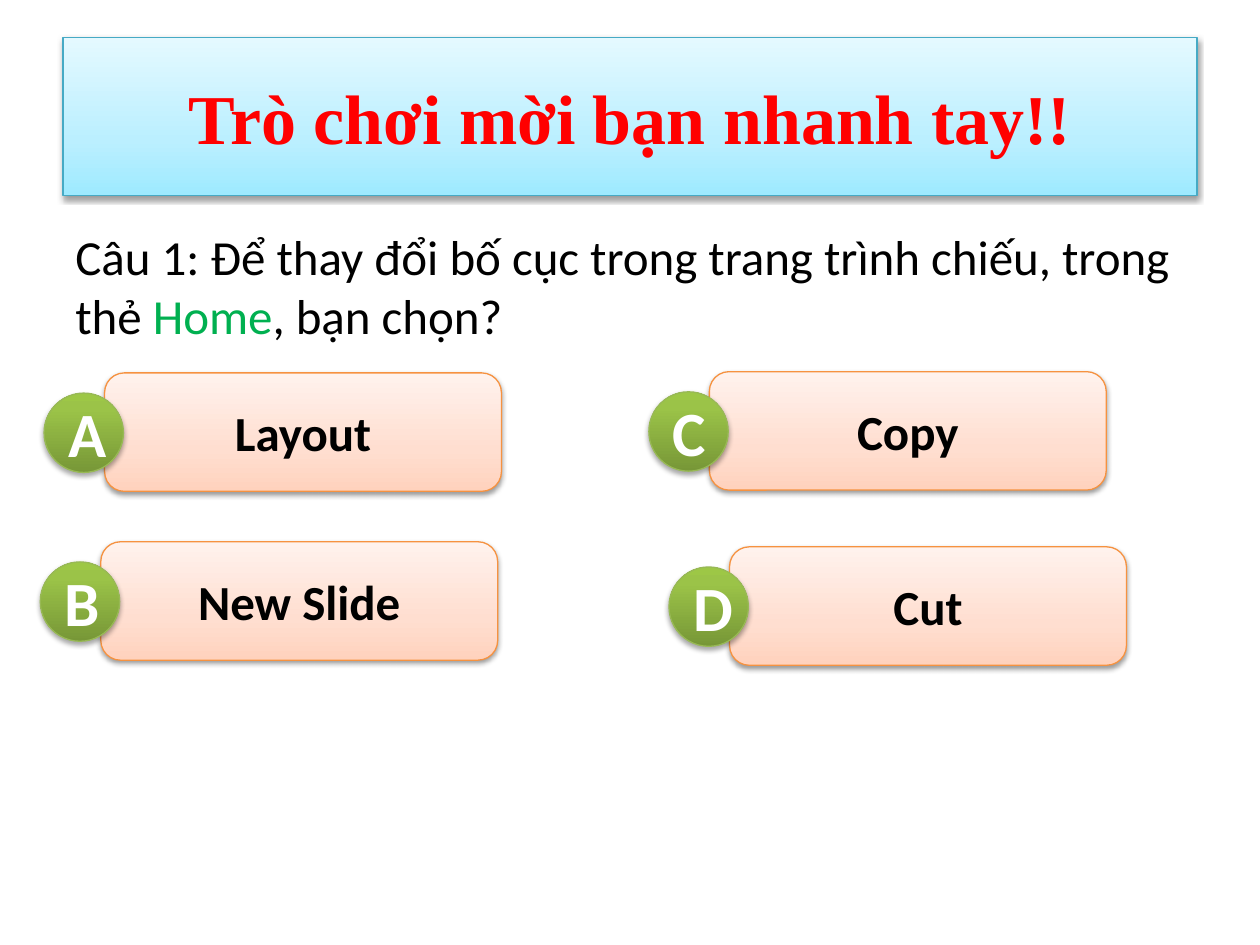
from lxml import etree
from pptx import Presentation
from pptx.dml.color import RGBColor
from pptx.enum.shapes import MSO_SHAPE
from pptx.enum.text import MSO_ANCHOR, PP_ALIGN
from pptx.oxml.ns import qn
from pptx.util import Inches, Pt

ROUNDED = MSO_SHAPE.ROUNDED_RECTANGLE
OVAL = MSO_SHAPE.OVAL
MIDDLE = MSO_ANCHOR.MIDDLE
CENTER = PP_ALIGN.CENTER

COLORS = {
    "black": "000000", "white": "FFFFFF", "red": "FF0000", "green": "00B050",
    "title line": "46AAC5", "answer line": "F69240", "badge line": "98B955",
}
# Stops run from bottom to top: (percent, colour)
TITLE_STOPS = [(0, "9EEAFF"), (35, "BBEFFF"), (100, "E4F9FF")]
ANSWER_STOPS = [(0, "FFD2BD"), (35, "FFDED0"), (100, "FFF2ED")]
BADGE_STOPS = [(0, "779737"), (80, "9BC348"), (100, "9DC746")]


def format_font(font, size, color, name="Calibri", bold=False):
    font.name = name
    font.size = Pt(size)
    font.bold = bold
    font.color.rgb = RGBColor.from_string(COLORS[color])


def add_panel(page, kind, bounds, stops, line, shadow, text):
    """Add a shape with a gradient, a soft shadow and centred text."""
    shape = page.shapes.add_shape(kind, *[Inches(value) for value in bounds])
    shape.fill.gradient()
    shape.fill.gradient_angle = 90
    properties = shape._element.spPr
    stop_list = properties.find(".//" + qn("a:gsLst"))
    for old_stop in list(stop_list):
        stop_list.remove(old_stop)
    for percent, color in stops:
        stop = etree.SubElement(stop_list, qn("a:gs"), pos=str(percent * 1000))
        etree.SubElement(stop, qn("a:srgbClr"), val=color)
    shape.line.color.rgb = RGBColor.from_string(COLORS[line])
    shape.line.width = Pt(0.75)

    opacity, distance = shadow
    shape.shadow.inherit = False
    outer = etree.SubElement(
        properties.find(qn("a:effectLst")), qn("a:outerShdw"),
        blurRad=str(Pt(3.1)), dist=str(Pt(distance)), dir="5400000", rotWithShape="0")
    shade = etree.SubElement(outer, qn("a:srgbClr"), val=COLORS["black"])
    etree.SubElement(shade, qn("a:alpha"), val=str(opacity * 1000))

    frame = shape.text_frame
    frame.text = text
    frame.word_wrap = True
    frame.vertical_anchor = MIDDLE
    frame.paragraphs[0].alignment = CENTER
    return shape


deck = Presentation()
deck.slide_width = Inches(10)
deck.slide_height = Inches(7.5)
page = deck.slides.add_slide(deck.slide_layouts[6])

# Question
box = page.shapes.add_textbox(Inches(0.5), Inches(1.75), Inches(9.3), Inches(1.06))
box.text_frame.word_wrap = True
para = box.text_frame.paragraphs[0]
for text, color in [
    ("Câu 1: Để thay đổi bố cục trong trang trình chiếu, trong thẻ ", "black"),
    ("Home", "green"),
    (", bạn chọn?", "black"),
]:
    span = para.add_run()
    span.text = text
    format_font(span.font, 28, color)

# Title
title = add_panel(page, ROUNDED, (0.5, 0.3, 9, 1.25), TITLE_STOPS, "title line",
                  (38, 1.6), "Trò chơi mời bạn nhanh tay!!")
title.adjustments[0] = 0
format_font(title.text_frame.paragraphs[0].runs[0].font, 40, "red", "Times New Roman", True)

# Answers, each with its letter badge overlapping the left edge
for letter, answer, left, top in [
    ("A", "Layout", 0.83, 2.96),
    ("B", "New Slide", 0.8, 4.3),
    ("C", "Copy", 5.63, 2.95),
    ("D", "Cut", 5.79, 4.34),
]:
    button = add_panel(page, ROUNDED, (left, top, 3.15, 0.94), ANSWER_STOPS,
                       "answer line", (38, 1.6), answer)
    format_font(button.text_frame.paragraphs[0].runs[0].font, 28, "black", bold=True)
    badge = add_panel(page, OVAL, (left - 0.48, top + 0.16, 0.63, 0.63), BADGE_STOPS,
                      "badge line", (35, 1.8), letter)
    format_font(badge.text_frame.paragraphs[0].runs[0].font, 36, "white", bold=True)

deck.save("out.pptx")
